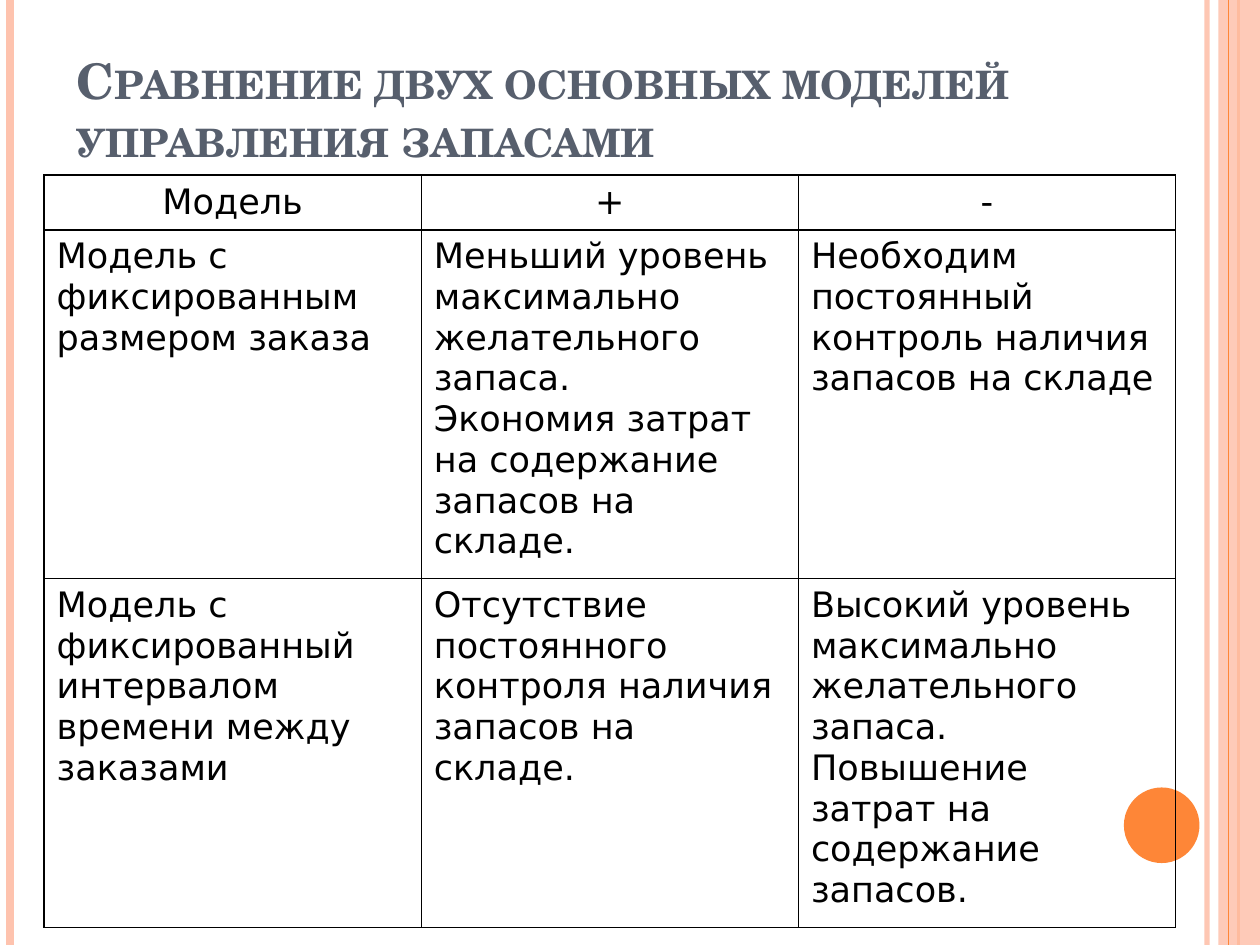
"""Build a slide comparing two inventory management models in a table."""
import lxml.etree
import pptx
import pptx.dml.color
import pptx.enum.shapes
import pptx.enum.text
import pptx.oxml.ns
import pptx.util

COLUMNS, ROWS = 100, 75
WIDTH, HEIGHT = pptx.util.Inches(10), pptx.util.Inches(7.5)

PEACH = pptx.dml.color.RGBColor(0xFE, 0xC3, 0xAE)
ORANGE = pptx.dml.color.RGBColor(0xFE, 0x86, 0x37)
SLATE = pptx.dml.color.RGBColor(0x57, 0x5F, 0x6D)
BLACK = pptx.dml.color.RGBColor(0, 0, 0)

TITLE = "Сравнение двух основных моделей управления запасами"
TITLE_FONT = {"name": "TeX Gyre Schola", "size": pptx.util.Pt(28), "bold": True}
TABLE_FONT = {"name": "DejaVu Sans", "size": pptx.util.Pt(20), "bold": False}
CENTER = pptx.enum.text.PP_ALIGN.CENTER
LEFT = pptx.enum.text.PP_ALIGN.LEFT
ANCHOR = pptx.enum.text.MSO_ANCHOR
SHAPE = pptx.enum.shapes.MSO_SHAPE

ROW_HEIGHTS = [4.2, 26.85, 26.85]
MODELS = [
    [["Модель"], ["+"], ["-"]],
    [
        ["Модель с фиксированным размером заказа"],
        ["Меньший уровень максимально желательного запаса.",
         "Экономия затрат на содержание запасов на складе."],
        ["Необходим постоянный контроль наличия запасов на складе"],
    ],
    [
        ["Модель с фиксированный интервалом времени между заказами"],
        ["Отсутствие постоянного контроля наличия запасов на складе."],
        ["Высокий уровень максимально желательного запаса.",
         "Повышение затрат на содержание запасов."],
    ],
]


def across(columns):
    """Return the length of a number of grid columns."""
    return round(WIDTH * columns / COLUMNS)


def down(rows):
    """Return the length of a number of grid rows."""
    return round(HEIGHT * rows / ROWS)


def area(left, top, width, height):
    """Return a grid area as slide lengths."""
    return across(left), down(top), across(width), down(height)


def add_element(parent, tag, **attributes):
    """Append a drawing element and return it."""
    return lxml.etree.SubElement(parent, pptx.oxml.ns.qn(tag), attributes)


def set_alpha(properties, percent):
    """Make the first solid colour in the properties translucent."""
    color = next(properties.iter(pptx.oxml.ns.qn("a:srgbClr")))
    add_element(color, "a:alpha", val=str(percent * 1000))


def style_font(font, formats, color):
    """Apply format values and a colour to a font."""
    for name, value in formats.items():
        setattr(font, name, value)
    font.color.rgb = color


def add_stripe(page, column, weight, color, alpha=100):
    """Draw a vertical line over the full height of the page."""
    stripe = page.shapes.add_connector(
        pptx.enum.shapes.MSO_CONNECTOR.STRAIGHT,
        across(column), 0, across(column), HEIGHT)
    stripe.line.width = pptx.util.Pt(weight)
    stripe.line.color.rgb = color
    properties = stripe._element.spPr
    if alpha < 100:
        set_alpha(properties, alpha)
    add_element(properties, "a:effectLst")


def add_figure(page, kind, place, color, alpha=100):
    """Draw a filled shape without an outline."""
    figure = page.shapes.add_shape(kind, *area(*place))
    figure.shadow.inherit = False
    figure.fill.solid()
    figure.fill.fore_color.rgb = color
    figure.line.fill.background()
    if alpha < 100:
        set_alpha(figure._element.spPr, alpha)


def add_title(page):
    """Write the heading in small capitals."""
    box = page.shapes.add_textbox(*area(5.1, 1.3, 81.7, 12.5))
    frame = box.text_frame
    frame.word_wrap = True
    frame.vertical_anchor = ANCHOR.BOTTOM
    span = frame.paragraphs[0].add_run()
    span.text = TITLE
    style_font(span.font, TITLE_FONT, SLATE)
    span.font._element.set("cap", "small")


def add_borders(cell):
    """Rule all four sides of a cell."""
    properties = cell._tc.get_or_add_tcPr()
    for side in ("a:lnL", "a:lnR", "a:lnT", "a:lnB"):
        line = add_element(properties, side, w=str(pptx.util.Pt(1)))
        fill = add_element(line, "a:solidFill")
        add_element(fill, "a:srgbClr", val=str(BLACK))


def fill_cell(cell, lines, is_header):
    """Write the lines of a cell and set its look."""
    add_borders(cell)
    cell.fill.background()
    cell.vertical_anchor = ANCHOR.MIDDLE if is_header else ANCHOR.TOP
    cell.text_frame.text = "\n".join(lines)
    for para in cell.text_frame.paragraphs:
        para.alignment = CENTER if is_header else LEFT
        for span in para.runs:
            style_font(span.font, TABLE_FONT, BLACK)


def add_models(page):
    """Add the table of models with their pros and cons."""
    place = area(3.5, 13.9, 89.8, sum(ROW_HEIGHTS))
    table = page.shapes.add_table(len(MODELS), len(MODELS[0]), *place).table
    table.first_row = table.horz_banding = False
    for row, (height, entries) in enumerate(zip(ROW_HEIGHTS, MODELS)):
        table.rows[row].height = down(height)
        for column, lines in enumerate(entries):
            fill_cell(table.cell(row, column), lines, row == 0)


def main():
    """Build and save the deck."""
    deck = pptx.Presentation()
    deck.slide_width, deck.slide_height = WIDTH, HEIGHT
    page = deck.slides.add_slide(deck.slide_layouts[6])
    add_stripe(page, 95.8, 3, PEACH, alpha=93)
    add_stripe(page, 0.8, 4.5, PEACH)
    add_stripe(page, 98.3, 1.5, ORANGE)
    add_figure(page, SHAPE.RECTANGLE, (96.7, 0, 3.3, ROWS), PEACH, alpha=87)
    add_stripe(page, 97.5, 0.75, ORANGE)
    add_figure(page, SHAPE.OVAL, (89.2, 62.5, 6, 6), ORANGE)
    add_title(page)
    add_models(page)
    deck.save("out.pptx")


if __name__ == "__main__":
    main()
